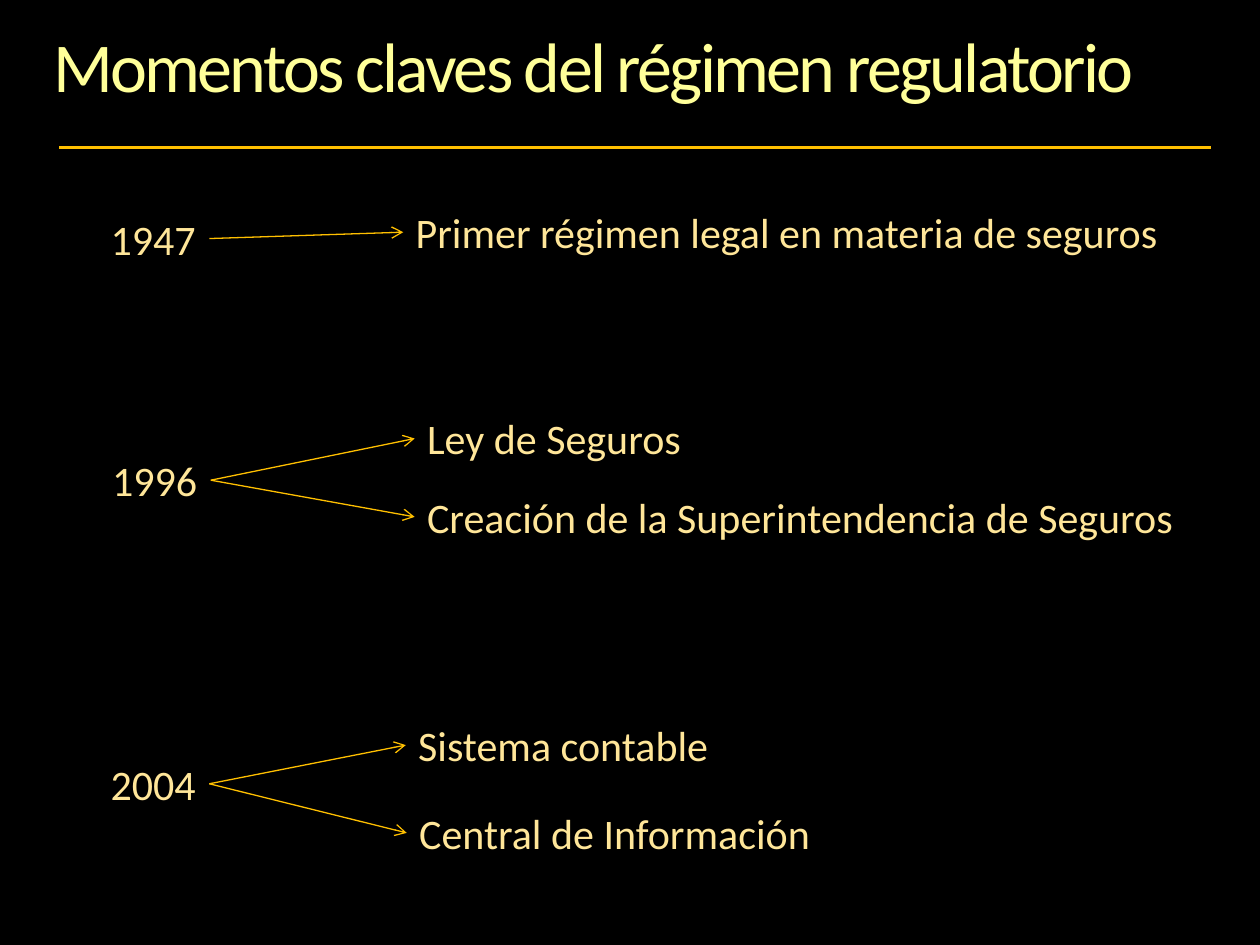
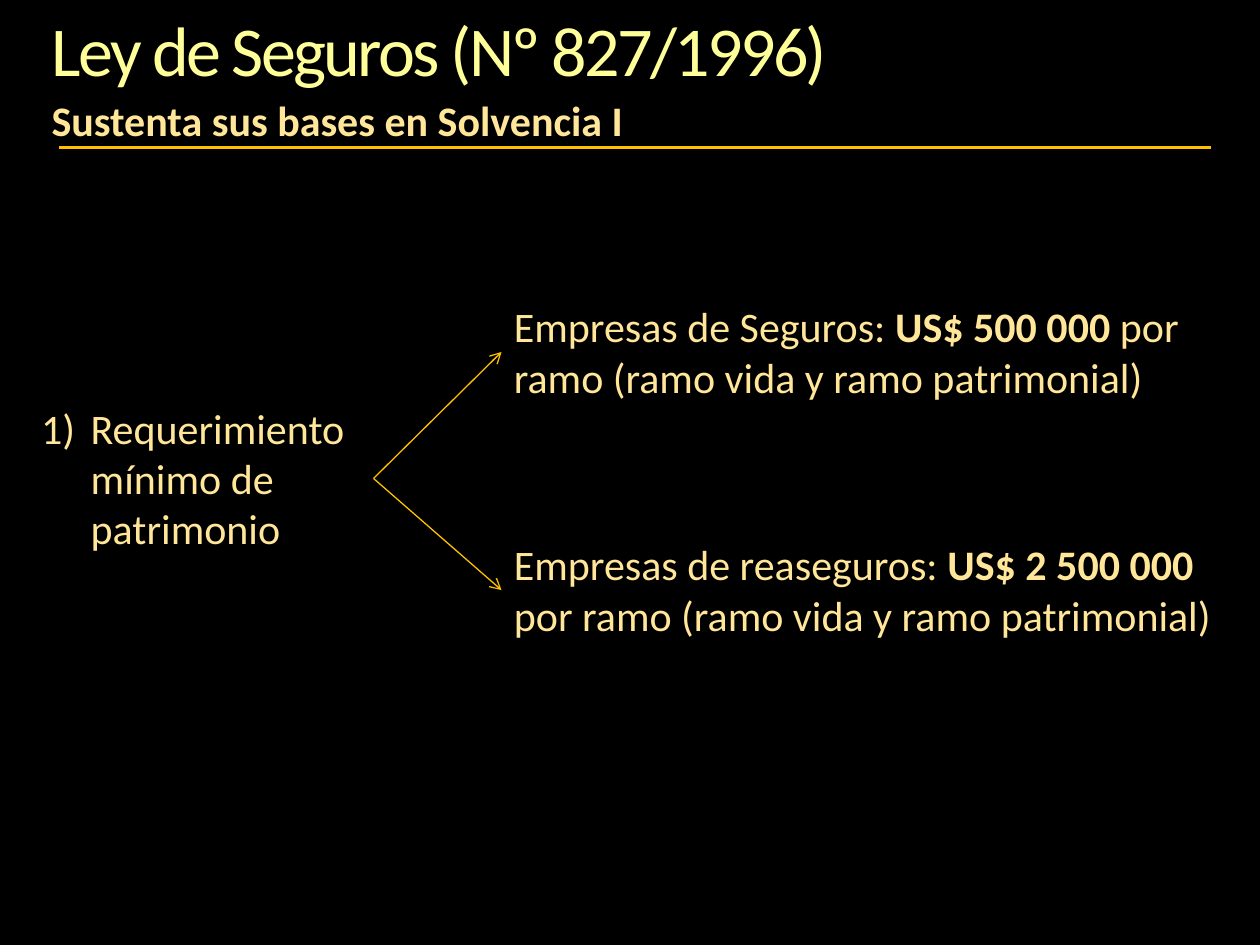
import pptx
import pptx.dml.color
import pptx.enum.shapes
import pptx.enum.text
import pptx.oxml
import pptx.oxml.ns
import pptx.util
from pptx.util import Cm

RGB = pptx.dml.color.RGBColor.from_string
THEME = {
    "background": RGB("000000"),
    "accent": RGB("FFC000"),
    "title": {"name": "Calibri", "size": pptx.util.Pt(40), "color": RGB("FFFF99"), "bold": False},
    "body": {"name": "Calibri", "size": pptx.util.Pt(24), "color": RGB("FFE699"), "bold": False},
    "title_spacing": "-150",
    "rule_width": pptx.util.Pt(1.5),
    "arrow_width": pptx.util.Pt(0.75),
}


def add_text(s, box, runs, style="body", wrap=True):
    """Add a text box; runs is a list of (text, bold) pairs."""
    sp = s.shapes.add_textbox(*[Cm(v) for v in box])
    tf = sp.text_frame
    tf.word_wrap = wrap
    p = tf.paragraphs[0]
    for text, bold in runs:
        r = p.add_run()
        r.text = text
        for key, value in {**THEME[style], "bold": bold}.items():
            if key == "color":
                r.font.color.rgb = value
            else:
                setattr(r.font, key, value)
        if style == "title":
            p.line_spacing = 0.9
            r.font._element.set("spc", THEME["title_spacing"])
    return sp


def add_line(s, start, end, width, arrow=False):
    """Add an accent line, with an open arrowhead at its end if asked."""
    sp = s.shapes.add_connector(pptx.enum.shapes.MSO_CONNECTOR.STRAIGHT,
                                *[Cm(v) for v in (*start, *end)])
    sp.line.color.rgb = THEME["accent"]
    sp.line.width = width
    if arrow:
        tail = pptx.oxml.parse_xml(f'<a:tailEnd {pptx.oxml.ns.nsdecls("a")} type="arrow"/>')
        sp.line._get_or_add_ln().append(tail)
    sp._element.spPr.append(pptx.oxml.parse_xml(f'<a:effectLst {pptx.oxml.ns.nsdecls("a")}/>'))


prs = pptx.Presentation()
prs.slide_width, prs.slide_height = Cm(25.4), Cm(19.05)

# Each slide: title and its box, then branches from one cause to its outcomes
LINE_H = 1.28
YEAR_W = 2.24
slides = [
    {
        "title": ("Momentos claves del régimen regulatorio", (1.07, 0.64, 23.75, 1.55)),
        "title_inset": 0,
        "wrap": False,
        "branches": [
            ("1947", (1.98, 4.17, YEAR_W, LINE_H), [
                ([("Primer régimen legal en materia de seguros", False)], (8.13, 4.04, 15.62, LINE_H)),
            ]),
            ("1996", (2.01, 9.04, YEAR_W, LINE_H), [
                ([("Ley de Seguros", False)], (8.36, 8.2, 5.69, LINE_H)),
                ([("Creación de la Superintendencia de Seguros", False)], (8.36, 9.78, 15.7, LINE_H)),
            ]),
            ("2004", (1.98, 15.16, YEAR_W, LINE_H), [
                ([("Sistema contable", False)], (8.18, 14.38, 6.4, LINE_H)),
                ([("Central de Información", False)], (8.2, 16.15, 8.46, LINE_H)),
            ]),
        ],
    },
    {
        "title": ("Ley de Seguros (Nº 827/1996)", (0.79, 0.2, 23.29, 1.55)),
        "subtitle": ("Sustenta sus bases en Solvencia I", (0.79, 1.78, 14.1, LINE_H)),
        "wrap": True,
        "branches": [
            ("1)\tRequerimiento mínimo de patrimonio", (0.58, 7.98, 6.95, 3.33), [
                ([("Empresas de Seguros: ", False), ("US$ 500 000 ", True),
                  ("por ramo (ramo vida y ramo patrimonial)", False)], (10.11, 5.94, 14.1, 2.31)),
                ([("Empresas de reaseguros: ", False), ("US$ 2 500 000 ", True),
                  ("por ramo (ramo vida y ramo patrimonial)", False)], (10.11, 10.74, 15.29, 2.31)),
            ]),
        ],
    },
]

for content in slides:
    s = prs.slides.add_slide(prs.slide_layouts[6])
    s.background.fill.solid()
    s.background.fill.fore_color.rgb = THEME["background"]

    # Heading and rule
    text, box = content["title"]
    sp = add_text(s, box, [(text, False)], "title")
    if "title_inset" in content:
        for side in ("left", "top", "right", "bottom"):
            setattr(sp.text_frame, f"margin_{side}", Cm(content["title_inset"]))
    if "subtitle" in content:
        text, box = content["subtitle"]
        add_text(s, box, [(text, True)])
    add_line(s, (1.19, 2.97), (24.41, 2.97), THEME["rule_width"])

    # Branches: arrows run from the cause's right edge to each outcome's left edge
    for cause, (x, y, w, h), outcomes in content["branches"]:
        sp = add_text(s, (x, y, w, h), [(cause, False)], wrap=content["wrap"])
        if "\t" in cause:
            pPr = sp.text_frame.paragraphs[0]._p.get_or_add_pPr()
            pPr.set("marL", str(Cm(1)))
            pPr.set("indent", str(Cm(-1)))
        for runs, box in outcomes:
            add_text(s, box, runs, wrap=content["wrap"])
            add_line(s, (x + w, y + h / 2), (box[0], box[1] + box[3] / 2),
                     THEME["arrow_width"], arrow=True)

prs.save("out.pptx")
